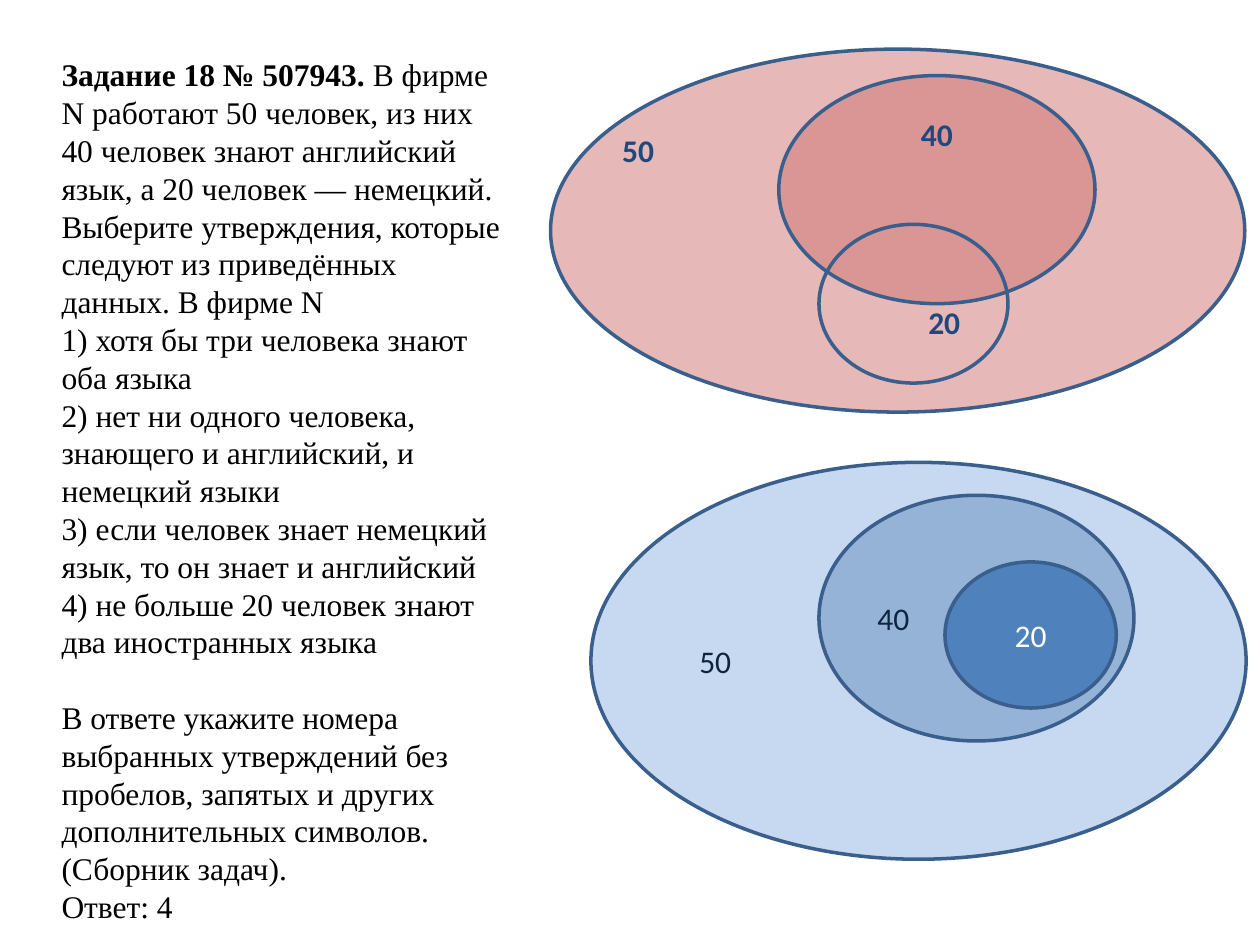
from pptx import Presentation
from pptx import util as u
from pptx.dml.color import RGBColor
from pptx.enum import shapes, text

BLACK = RGBColor(0x00, 0x00, 0x00)
WHITE = RGBColor(0xFF, 0xFF, 0xFF)
NAVY = RGBColor(0x1F, 0x49, 0x7D)
DARK = RGBColor(0x0F, 0x24, 0x3E)
OUTLINE = RGBColor(0x3A, 0x5F, 0x8C)
PINK = RGBColor(0xE6, 0xB9, 0xB8)
ROSE = RGBColor(0xD9, 0x96, 0x94)
PALE_BLUE = RGBColor(0xC6, 0xD9, 0xF1)
MID_BLUE = RGBColor(0x95, 0xB3, 0xD7)
BLUE = RGBColor(0x4F, 0x81, 0xBD)

LEFT, CENTER = text.PP_ALIGN.LEFT, text.PP_ALIGN.CENTER
TOP, MIDDLE = text.MSO_ANCHOR.TOP, text.MSO_ANCHOR.MIDDLE

TASK_FORMAT = {"name": "Times New Roman", "size": u.Pt(18), "bold": False}
BOLD_FORMAT = {"name": "Calibri", "size": u.Pt(18), "bold": True}
PLAIN_FORMAT = {"name": "Calibri", "size": u.Pt(18), "bold": False}

# Task wording: heading, condition, statements, instruction, answer
HEADING = "Задание 18 № 507943."
CONDITION = (" В фирме N работают 50 человек, из них 40 человек знают английский "
             "язык, а 20 человек — немецкий. Выберите утверждения, которые следуют "
             "из приведённых данных. В фирме N ")
STATEMENTS = [
    "1) хотя бы три человека знают оба языка",
    "2) нет ни одного человека, знающего и английский, и немецкий языки",
    "3) если человек знает немецкий язык, то он знает и английский",
    "4) не больше 20 человек знают два иностранных языка",
]
INSTRUCTION = ("В ответе укажите номера выбранных утверждений без пробелов, запятых "
               "и других дополнительных символов. (Сборник задач).")
ANSWER = "Ответ: 4"
TASK_BOX = (28.08, 28.08, 269.28, 509.04)
INSTRUCTION_GAP = 21.6

# Sets from back to front: box, fill, label, label colour, format, alignment, anchor
OVERLAPPING_SETS = [
    ((314.6, 28.1, 396.7, 207.4), PINK, "", NAVY, BOLD_FORMAT, LEFT, TOP),
    ((445, 43.2, 180.7, 130.3), ROSE, "40", NAVY, BOLD_FORMAT, CENTER, TOP),
    ((468, 128.2, 108, 90.7), None, "", NAVY, BOLD_FORMAT, LEFT, TOP),
]
NESTED_SETS = [
    ((337.7, 264.2, 374.4, 226.8), PALE_BLUE, "50", DARK, PLAIN_FORMAT, LEFT, MIDDLE),
    ((468, 283, 180, 140.4), MID_BLUE, "40", DARK, PLAIN_FORMAT, LEFT, MIDDLE),
    ((540, 321.1, 97.9, 83.5), BLUE, "20", WHITE, PLAIN_FORMAT, CENTER, MIDDLE),
]
# Free labels of the overlapping sets
SET_LABELS = [("50", (348.5, 71.3, 33.1, 28.8)), ("20", (523.4, 169.9, 33.1, 28.8))]


def points(box):
    return [u.Pt(length) for length in box]


def add_run(paragraph, wording, color, font_format, **changes):
    run = paragraph.add_run()
    run.text = wording
    for attribute, value in {**font_format, **changes}.items():
        setattr(run.font, attribute, value)
    run.font.color.rgb = color


def add_text_box(slide, box, wrap):
    frame = slide.shapes.add_textbox(*points(box)).text_frame
    frame.word_wrap = wrap
    frame.auto_size = text.MSO_AUTO_SIZE.SHAPE_TO_FIT_TEXT
    return frame


def add_set(slide, box, fill, label, color, font_format, alignment, anchor):
    ellipse = slide.shapes.add_shape(shapes.MSO_SHAPE.OVAL, *points(box))
    ellipse.shadow.inherit = False
    if fill is None:
        ellipse.fill.background()
    else:
        ellipse.fill.solid()
        ellipse.fill.fore_color.rgb = fill
    ellipse.line.color.rgb = OUTLINE
    ellipse.line.width = u.Pt(2)
    if label:
        ellipse.text_frame.vertical_anchor = anchor
        paragraph = ellipse.text_frame.paragraphs[0]
        paragraph.alignment = alignment
        add_run(paragraph, label, color, font_format)


def main():
    deck = Presentation()
    deck.slide_width, deck.slide_height = u.Pt(720), u.Pt(540)
    slide = deck.slides.add_slide(deck.slide_layouts[6])

    # Task text
    task = add_text_box(slide, TASK_BOX, True)
    opening = task.paragraphs[0]
    add_run(opening, HEADING, BLACK, TASK_FORMAT, bold=True)
    add_run(opening, CONDITION, BLACK, TASK_FORMAT)
    for wording in [*STATEMENTS, INSTRUCTION, ANSWER]:
        paragraph = task.add_paragraph()
        add_run(paragraph, wording, BLACK, TASK_FORMAT)
        if wording == INSTRUCTION:
            paragraph.space_before = u.Pt(INSTRUCTION_GAP)

    # Set diagrams
    for language_set in OVERLAPPING_SETS + NESTED_SETS:
        add_set(slide, *language_set)
    for label, box in SET_LABELS:
        frame = add_text_box(slide, box, False)
        add_run(frame.paragraphs[0], label, NAVY, BOLD_FORMAT)

    deck.save("out.pptx")


if __name__ == "__main__":
    main()
